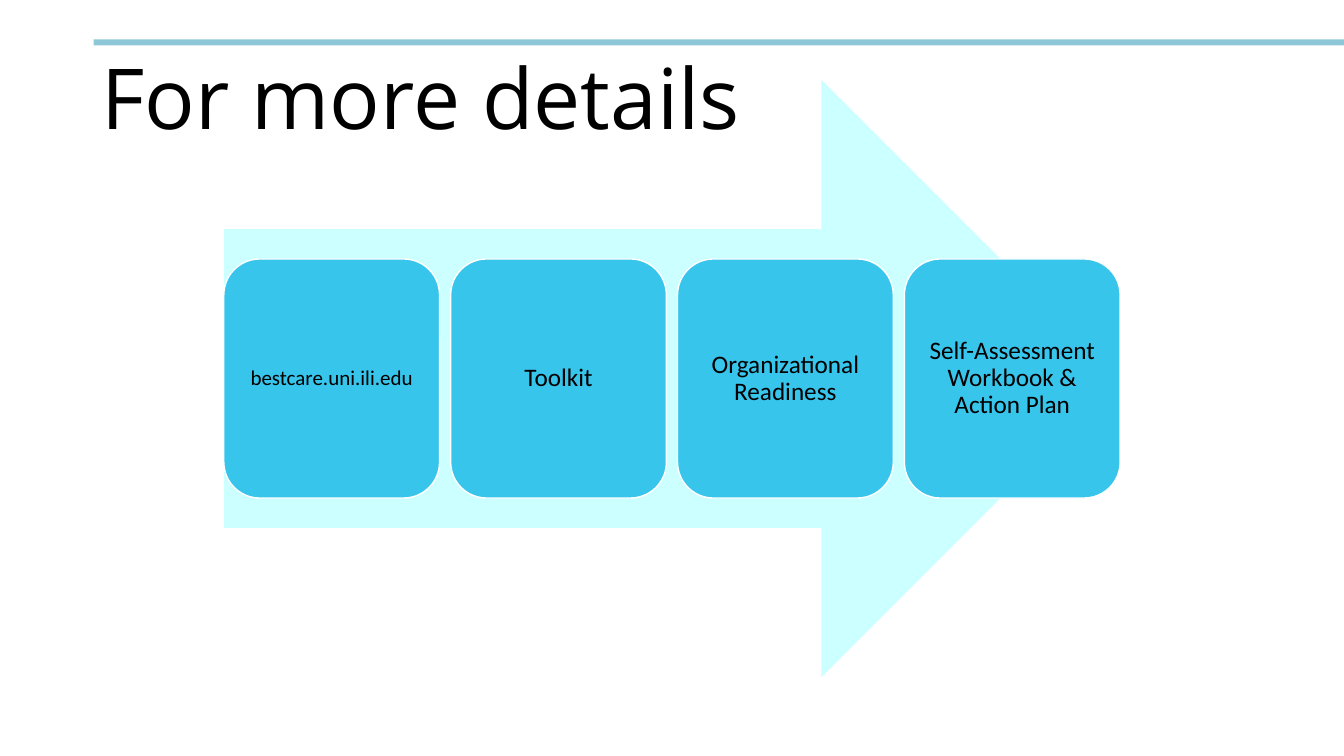
from pptx import Presentation
from pptx.dml.color import RGBColor
from pptx.enum.shapes import MSO_SHAPE as SHAPE
from pptx.enum.text import MSO_ANCHOR as ANCHOR, PP_ALIGN as ALIGN
from pptx.util import Emu, Pt

PX = 9144  # 100 px to the inch
STEPS = [
    ("bestcare.uni.ili.edu", 15, 6),
    ("Toolkit", 18, 7),
    ("Organizational Readiness", 18, 7),
    ("Self-Assessment Workbook & Action Plan", 18, 7),
]


def px(n):
    return Emu(round(n * PX))


def color(hex_string):
    return RGBColor.from_string(hex_string)


def add_block(slide, kind, box, fill, line=None):
    sp = slide.shapes.add_shape(kind, *map(px, box))
    sp.shadow.inherit = False
    sp.fill.solid()
    sp.fill.fore_color.rgb = color(fill)
    if line:
        sp.line.color.rgb = color(line)
        sp.line.width = Pt(1)
    else:
        sp.line.fill.background()
    return sp


def write(sp, text, size, font, anchor, align, inset):
    """Fill a shape with one paragraph; inset is (horizontal, vertical) px."""
    tf = sp.text_frame
    tf.word_wrap = True
    tf.vertical_anchor = anchor
    tf.margin_left = tf.margin_right = px(inset[0])
    tf.margin_top = tf.margin_bottom = px(inset[1])
    p = tf.paragraphs[0]
    p.alignment = align
    p.line_spacing = 0.9
    r = p.add_run()
    r.text = text
    r.font.size = Pt(size)
    r.font.name = font
    r.font.color.rgb = color("000000")


def add_header(slide, box):
    left, top, width, height = box
    add_block(slide, SHAPE.RECTANGLE, (left + 2, top, width - 2, 6), "8EC7D7")
    title = slide.shapes.add_textbox(*map(px, (left, top + 9, 1150, height - 9)))
    write(title, "For more details", 60, "Open Sans", ANCHOR.BOTTOM,
          ALIGN.LEFT, (10, 5))


def add_process(slide, box):
    """Draw the steps as evenly spaced cards across a wide arrow."""
    left, top, width, height = box
    add_block(slide, SHAPE.RIGHT_ARROW, box, "CCFFFF")
    gap = 11
    card_w = (width - gap * (len(STEPS) - 1)) / len(STEPS)
    card_h = height * 0.4
    card_top = top + (height - card_h) / 2
    for i, (text, size, inset) in enumerate(STEPS):
        card_box = (left + i * (card_w + gap), card_top, card_w, card_h)
        card = add_block(slide, SHAPE.ROUNDED_RECTANGLE, card_box, "38C5EC", "FFFFFF")
        write(card, text, size, "Calibri", ANCHOR.MIDDLE, ALIGN.CENTER,
              (inset, inset))


def main():
    prs = Presentation()
    prs.slide_width, prs.slide_height = px(1333), px(750)
    slide = prs.slides.add_slide(prs.slide_layouts[6])
    add_header(slide, (91, 39, 1242, 112))
    add_process(slide, (222, 79, 889, 593))
    prs.save("out.pptx")


if __name__ == "__main__":
    main()
